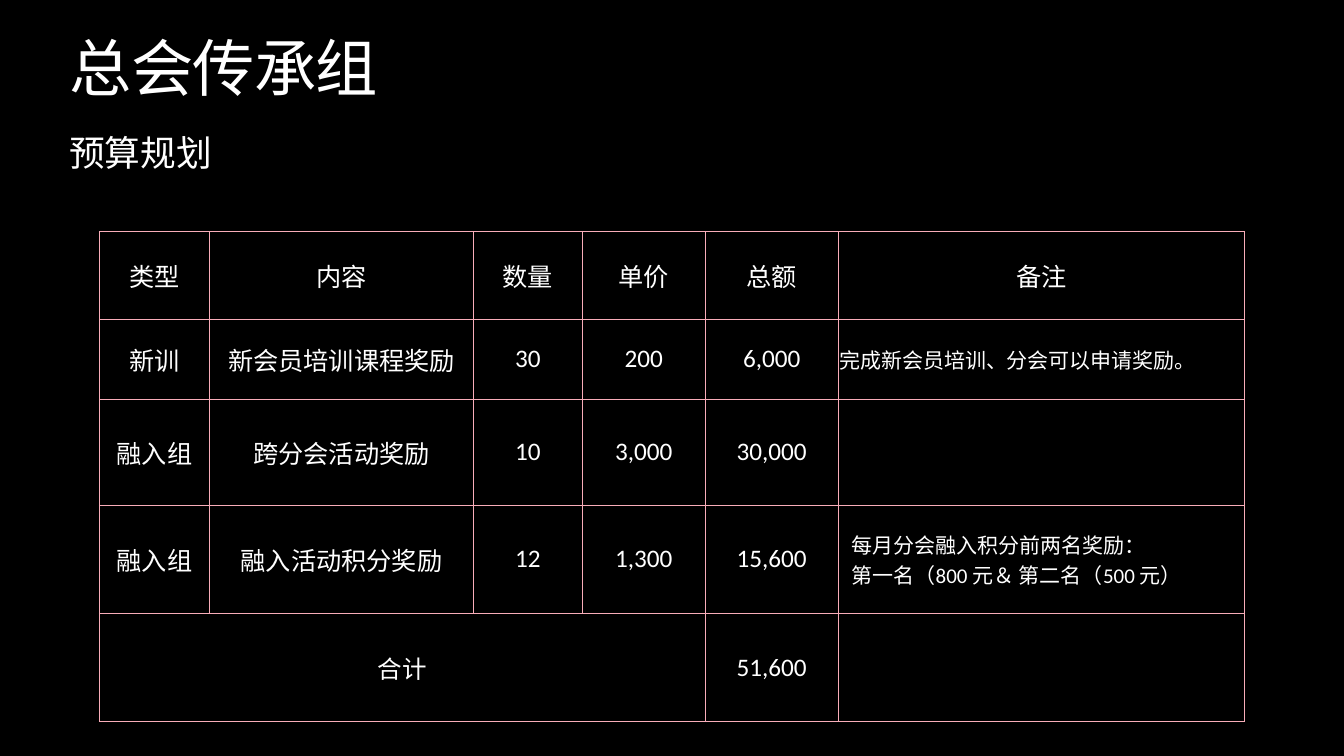
"""Build the budget planning slide."""
from dataclasses import dataclass

from lxml.etree import SubElement
from pptx import Presentation
from pptx.dml.color import RGBColor as RGB
from pptx.enum.text import MSO_ANCHOR as Anchor, PP_ALIGN as Align
from pptx.oxml.ns import qn
from pptx.util import Pt


@dataclass(frozen=True)
class Theme:
    """Colours, font and type sizes."""
    font: str = "Calibri"
    back: RGB = RGB(0, 0, 0)
    ink: RGB = RGB(255, 255, 255)
    rule: RGB = RGB(0xF8, 0xAD, 0xB9)
    title: int = 89
    subtitle: int = 51
    cell: int = 36
    total: int = 35
    note: int = 30


class Deck:
    """Holds the theme and the current slide."""

    def __init__(self, prs, theme):
        """Add a title-only slide with the theme background."""
        self.t = theme
        self.s = prs.slides.add_slide(prs.slide_layouts[5])
        fill = self.s.background.fill
        fill.solid()
        fill.fore_color.rgb = theme.back

    def put_text(self, tf, text, size, align=Align.LEFT):
        """Set text and format every run."""
        tf.text = text
        for p in tf.paragraphs:
            p.alignment = align
            for r in p.runs:
                r.font.name = self.t.font
                r.font.size = Pt(size)
                r.font.color.rgb = self.t.ink

    def frame(self, sp, box, inset):
        """Place a text shape and set its frame."""
        sp.left, sp.top, sp.width, sp.height = map(Pt, box)
        tf = sp.text_frame
        tf.word_wrap = True
        tf.vertical_anchor = Anchor.TOP
        tf.margin_left = tf.margin_right = Pt(inset)
        tf.margin_top = tf.margin_bottom = Pt(inset)
        return tf

    def title(self, text, box):
        """Fill the title placeholder."""
        tf = self.frame(self.s.shapes.title, box, 4.3)
        self.put_text(tf, text, self.t.title)
        p = tf.paragraphs[0]
        p.line_spacing = 0.9
        p.runs[0]._r.get_or_add_rPr().set("spc", "-100")

    def subtitle(self, text, box):
        """Add the line below the title."""
        sp = self.s.shapes.add_textbox(*map(Pt, box))
        self.put_text(self.frame(sp, box, 3.6), text, self.t.subtitle)

    def border(self, cell):
        """Rule all four sides of a cell."""
        tc_pr = cell._tc.get_or_add_tcPr()
        for side in ("lnL", "lnR", "lnT", "lnB"):
            ln = SubElement(tc_pr, qn(f"a:{side}"), w=str(Pt(1)))
            fill = SubElement(ln, qn("a:solidFill"))
            SubElement(fill, qn("a:srgbClr"), val=str(self.t.rule))

    def cell(self, cell, text, size, align):
        """Style and fill one table cell."""
        self.border(cell)
        cell.fill.solid()
        cell.fill.fore_color.rgb = self.t.back
        cell.vertical_anchor = Anchor.MIDDLE
        cell.margin_left = cell.margin_right = Pt(0.7)
        cell.margin_top = cell.margin_bottom = Pt(0.7)
        self.put_text(cell.text_frame, text, size, align)

    def indent(self, cell, width):
        """Indent the first line of each paragraph in a cell."""
        for p in cell.text_frame.paragraphs:
            p_pr = p._p.get_or_add_pPr()
            p_pr.set("marL", "0")
            p_pr.set("indent", str(Pt(width)))

    def table(self, rows, origin, widths, heights):
        """Add a ruled table whose last column holds notes."""
        size = sum(widths), sum(heights)
        tbl = self.s.shapes.add_table(
            len(rows), len(widths), *map(Pt, (*origin, *size))).table
        tbl.first_row = tbl.horz_banding = False
        for col, width in zip(tbl.columns, widths):
            col.width = Pt(width)
        for row, height in zip(tbl.rows, heights):
            row.height = Pt(height)
        last = len(widths) - 1
        for i, row in enumerate(rows):
            for j, text in enumerate(row):
                note = i > 0 and j == last
                self.cell(tbl.cell(i, j), text,
                          self.t.note if note else self.t.cell,
                          Align.LEFT if note else Align.CENTER)
        return tbl


ROWS = [
    ["类型", "内容", "数量", "单价", "总额", "备注"],
    ["新训", "新会员培训课程奖励", "30", "200", "6,000",
     "完成新会员培训、分会可以申请奖励。"],
    ["融入组", "跨分会活动奖励", "10", "3,000", "30,000", ""],
    ["融入组", "融入活动积分奖励", "12", "1,300", "15,600",
     "每月分会融入积分前两名奖励：\n第一名（800 元＆ 第二名（500 元）"],
    ["合计", "", "", "", "51,600", ""],
]


def main():
    """Build and save the slide."""
    prs = Presentation()
    prs.slide_width, prs.slide_height = Pt(1920), Pt(1080)
    theme = Theme()
    deck = Deck(prs, theme)
    deck.title("总会传承组", (95, 49.7, 769.7, 133.2))
    tbl = deck.table(ROWS, (141.8, 330.5),
                     (157.7, 376.5, 156.2, 175, 190.8, 579.6),
                     (125.3, 114.5, 151.2, 154.8, 154.8))
    deck.indent(tbl.cell(3, 5), 18)
    total = tbl.cell(4, 0)
    total.merge(tbl.cell(4, 3))
    deck.put_text(total.text_frame, "合计", theme.total, Align.CENTER)
    deck.subtitle("预算规划", (95, 182.9, 769.7, 79.2))
    prs.save("out.pptx")


if __name__ == "__main__":
    main()
